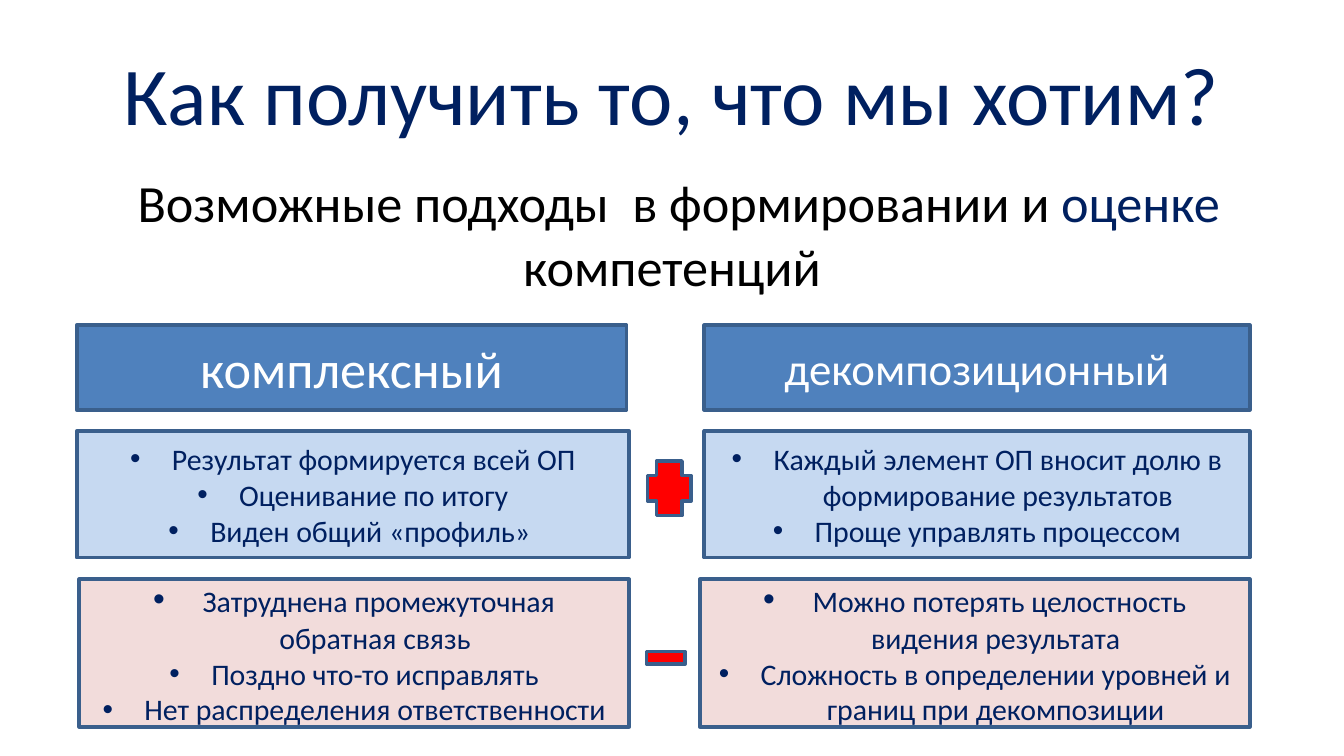
from lxml import etree
from pptx import Presentation, util as u
from pptx.dml.color import RGBColor
from pptx.enum import shapes, text
from pptx.oxml.ns import qn

NAVY, BLACK, WHITE, EDGE, RED = "002060", "000000", "FFFFFF", "3A5F8C", "FF0000"
BLUE, PALE, PINK = "4F81BD", "C6D9F1", "F2DCDB"


def write(frame, paras, anchor, **form):
    for key, val in dict(word_wrap=True, vertical_anchor=anchor).items():
        setattr(frame, key, val)
    for i, runs in enumerate(paras):
        para = frame.paragraphs[0] if i == 0 else frame.add_paragraph()
        for key, val in dict(alignment=text.PP_ALIGN.CENTER, **form).items():
            setattr(para, key, val)
        for words, size, hue in runs:
            run = para.add_run()
            run.text = words
            for key, val in dict(name="Calibri", size=u.Pt(size)).items():
                setattr(run.font, key, val)
            run.font.color.rgb = RGBColor.from_string(hue)


def draw(kind, place, fill):
    item = slide.shapes.add_shape(kind, *map(u.Cm, place))
    item.shadow.inherit = False
    item.fill.solid()
    item.fill.fore_color.rgb = RGBColor.from_string(fill)
    item.line.color.rgb = RGBColor.from_string(EDGE)
    item.line.width = u.Pt(2)
    return item


deck = Presentation()
deck.slide_width, deck.slide_height = u.Cm(25.4), u.Cm(14.29)
slide = deck.slides.add_slide(deck.slide_layouts[5])
mid, top = text.MSO_ANCHOR.MIDDLE, text.MSO_ANCHOR.TOP

title = slide.shapes.title
spot = dict(left=1.27, top=0.57, width=22.86, height=2.38)
for key, val in spot.items():
    setattr(title, key, u.Cm(val))
write(title.text_frame, [[("Как получить то, что мы хотим?", 44, NAVY)]], mid)

intro = slide.shapes.add_textbox(*map(u.Cm, (1.27, 2.95, 22.86, 9.83)))
write(intro.text_frame, [[
    (" ", 32, BLACK),
    ("Возможные подходы  в формировании и ", 28, BLACK),
    ("оценке ", 28, NAVY),
    ("компетенций", 28, BLACK),
]], top, space_before=u.Pt(2.5))

heads = [
    (1.45, 10.39, "комплексный", 28),
    (13.31, 10.31, "декомпозиционный", 24),
]
for left, wide, words, size in heads:
    box = draw(shapes.MSO_SHAPE.RECTANGLE, (left, 6.15, wide, 1.6), BLUE)
    write(box.text_frame, [[(words, size, WHITE)]], mid)

pros, cons = (8.15, 2.39, PALE), (10.95, 2.79, PINK)
lists = [
    (1.45, 10.44, pros, ["Результат формируется всей ОП",
                         "Оценивание по итогу",
                         "Виден общий «профиль» "]),
    (13.31, 10.31, pros, ["Каждый элемент ОП вносит долю в формирование результатов",
                          "Проще управлять процессом"]),
    (1.5, 10.39, cons, ["Затруднена промежуточная обратная связь",
                        "Поздно что-то исправлять",
                        "Нет распределения ответственности"]),
    (13.23, 10.39, cons, ["Можно потерять целостность видения результата",
                          "Сложность в определении уровней и границ при декомпозиции"]),
]
for left, wide, (high, tall, fill), lines in lists:
    box = draw(shapes.MSO_SHAPE.RECTANGLE, (left, high, wide, tall), fill)
    paras = [[(line, 16, NAVY)] for line in lines]
    if fill == PINK:
        paras[0].insert(0, (" ", 18, NAVY))
    write(box.text_frame, paras, mid)
    for para in box.text_frame.paragraphs:
        props = para._p.get_or_add_pPr()
        props.set("marL", str(u.Cm(0.79)))
        props.set("indent", str(-u.Cm(0.79)))
        etree.SubElement(props, qn("a:buFont"), typeface="Arial")
        etree.SubElement(props, qn("a:buChar"), char="•")

plus = draw(shapes.MSO_SHAPE.MATH_PLUS, (12.09, 8.53, 1.12, 1.4), RED)
plus.adjustments[0] = 0.43
draw(shapes.MSO_SHAPE.MATH_MINUS, (12.09, 11.94, 0.99, 0.99), RED)

deck.save("out.pptx")
